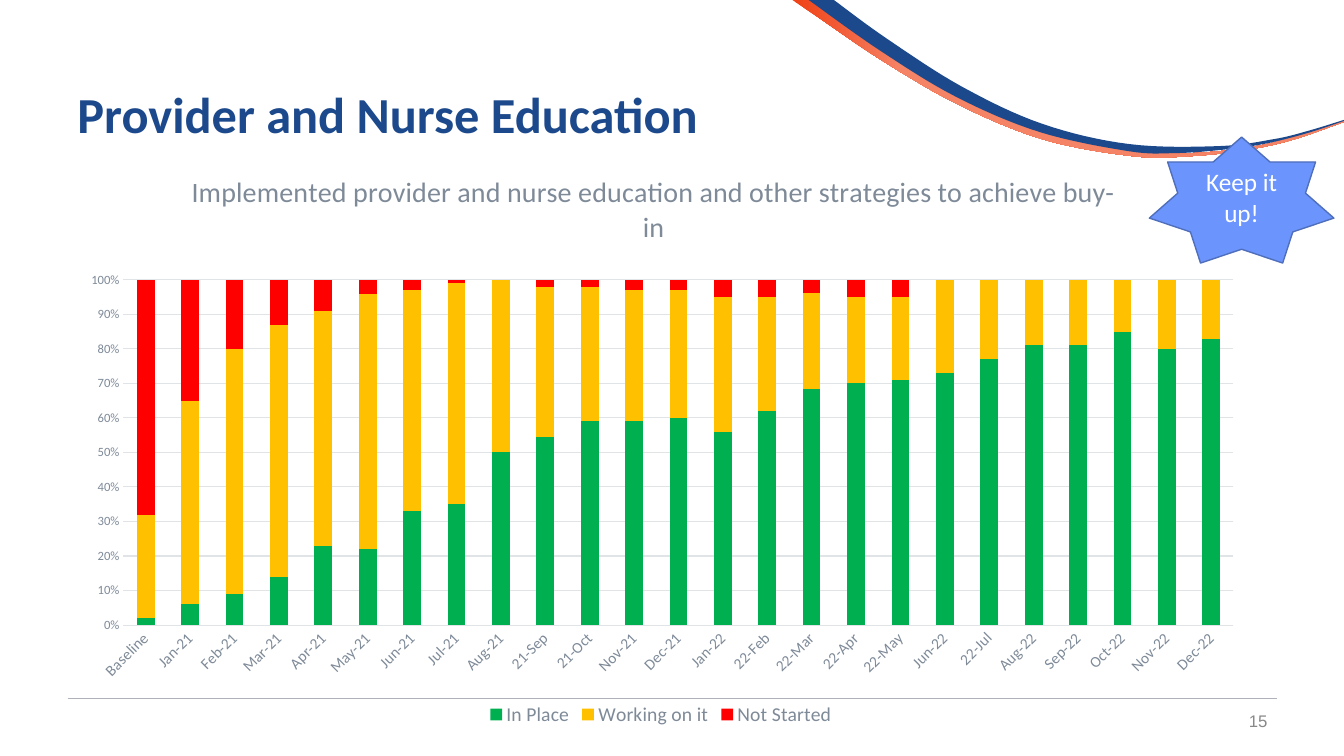
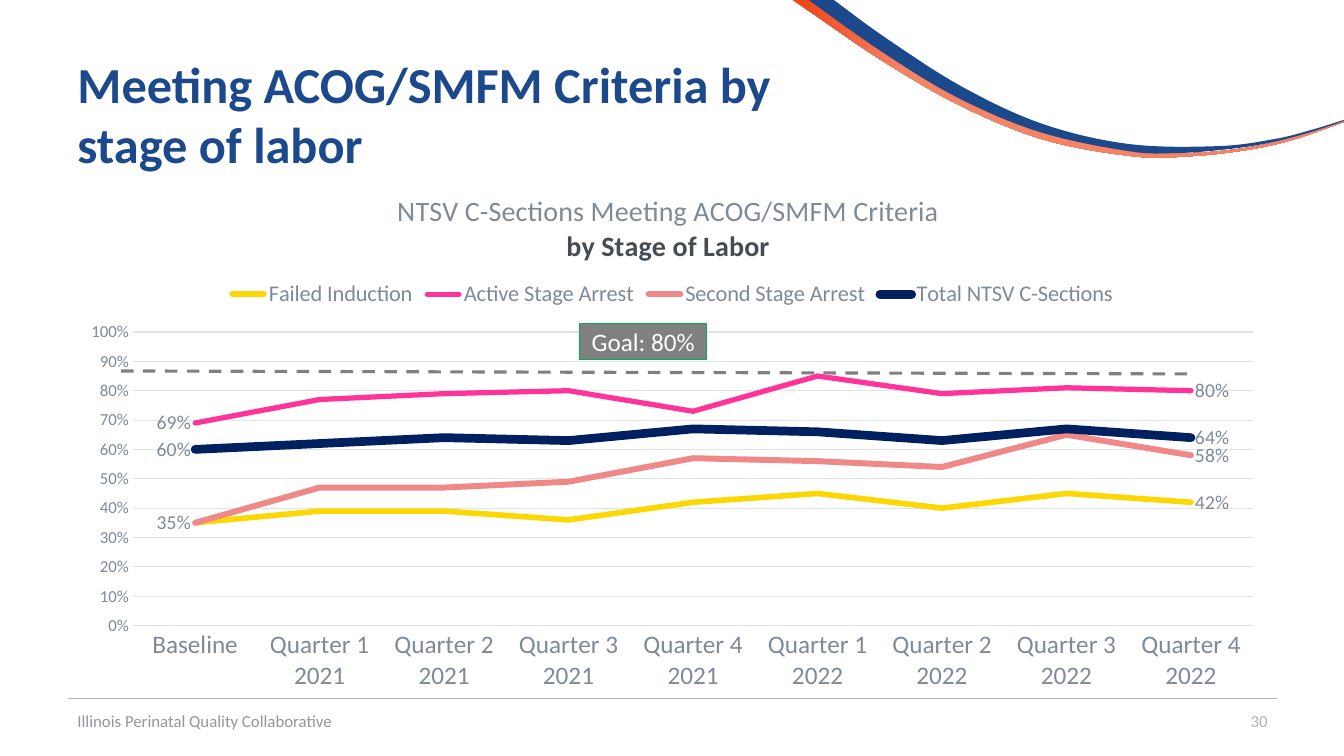
"""Build two slides on perinatal quality measures, each with a native chart."""

from dataclasses import dataclass

import lxml.etree
import pptx
import pptx.chart.chart
import pptx.chart.data
import pptx.dml.color
import pptx.enum.chart
import pptx.enum.dml
import pptx.enum.shapes
import pptx.enum.text
import pptx.oxml
import pptx.oxml.ns
import pptx.slide
import pptx.text.text
import pptx.util

Inches = pptx.util.Inches
Pt = pptx.util.Pt
RGBColor = pptx.dml.color.RGBColor
qn = pptx.oxml.ns.qn
ChartType = pptx.enum.chart.XL_CHART_TYPE
LabelPosition = pptx.enum.chart.XL_LABEL_POSITION
LegendPosition = pptx.enum.chart.XL_LEGEND_POSITION
Align = pptx.enum.text.PP_ALIGN
Preset = pptx.enum.shapes.MSO_SHAPE

NAVY = RGBColor(0x1C, 0x49, 0x8B)
ORANGE = RGBColor(0xF0, 0x41, 0x15)
SALMON = RGBColor(0xF5, 0x83, 0x66)
WHITE = RGBColor(0xFF, 0xFF, 0xFF)
RULE_GREY = RGBColor(0xAF, 0xB3, 0xB9)
NUMBER_GREY = RGBColor(0x89, 0x89, 0x89)
FOOTER_GREY = RGBColor(0x94, 0x96, 0x99)
LABEL_GREY = RGBColor(0x7E, 0x8A, 0x98)
GRID_GREY = RGBColor(0xE1, 0xE4, 0xE7)
SLATE = RGBColor(0x44, 0x4C, 0x55)
GOAL_GREY = RGBColor(0x80, 0x80, 0x80)
GREEN = RGBColor(0x00, 0xB0, 0x50)
AMBER = RGBColor(0xFF, 0xC0, 0x00)
RED = RGBColor(0xFF, 0x00, 0x00)
YELLOW = RGBColor(0xFD, 0xD7, 0x02)
PINK = RGBColor(0xFF, 0x33, 0x99)
ROSE = RGBColor(0xF0, 0x88, 0x88)
MIDNIGHT = RGBColor(0x00, 0x20, 0x60)
STAR_BLUE = RGBColor(0x6B, 0x95, 0xFD)
STAR_EDGE = RGBColor(0x4F, 0x6E, 0xBB)

Points = list[tuple[float, float]]
Box = tuple[float, float, float, float]

ORANGE_TOP: Points = [
    (8.05, 0), (8.82, 0.54), (9.58, 0.99), (10.39, 1.33), (11.25, 1.5),
    (11.79, 1.52), (12.34, 1.47), (12.8, 1.37), (13.33, 1.2)]
ORANGE_BOTTOM: Points = [
    (13.33, 1.21), (12.81, 1.39), (12.35, 1.49), (11.8, 1.55), (11.24, 1.55),
    (10.37, 1.39), (9.55, 1.06), (8.78, 0.62), (8.04, 0.12), (7.86, 0)]
NAVY_TOP: Points = [
    (8.27, 0), (8.79, 0.38), (9.54, 0.86), (10.34, 1.23), (11.2, 1.43),
    (12.09, 1.45), (12.64, 1.38), (12.97, 1.3), (13.33, 1.19)]
NAVY_BOTTOM: Points = [
    (13.33, 1.2), (12.97, 1.32), (12.53, 1.43), (12.09, 1.49), (11.64, 1.52),
    (11.19, 1.5), (10.31, 1.31), (9.48, 0.96), (8.71, 0.49), (8.02, 0)]


@dataclass(frozen=True)
class TextStyle:
    size: float
    color: RGBColor
    bold: bool = False
    font: str = "Calibri"
    align: Align = Align.LEFT


@dataclass(frozen=True)
class Measure:
    name: str
    values: list[float]
    color: RGBColor
    width: float = 0
    labelled: tuple[int, ...] = ()


@dataclass(frozen=True)
class ChartPlan:
    kind: ChartType
    box: Box
    heading: list[tuple[str, TextStyle]]
    categories: list[str]
    measures: list[Measure]
    number_format: str
    category_size: float
    value_size: float
    legend_size: float
    legend_side: LegendPosition
    plot_area: Box
    heading_at: tuple[float, float]
    legend_at: tuple[float, float]


TITLE = TextStyle(36, NAVY, bold=True)
CHART_HEADING = TextStyle(20, LABEL_GREY, align=Align.CENTER)
CHART_SUBHEADING = TextStyle(20, SLATE, bold=True, align=Align.CENTER)
CALLOUT = TextStyle(18, WHITE, align=Align.CENTER)

EDUCATION = ChartPlan(
    ChartType.COLUMN_STACKED_100, (0.67, 1.57, 11.8, 5.69),
    [("Implemented provider and nurse education and other strategies to achieve buy-in",
      CHART_HEADING)],
    ["Baseline", "Jan-21", "Feb-21", "Mar-21", "Apr-21", "May-21", "Jun-21", "Jul-21",
     "Aug-21", "21-Sep", "21-Oct", "Nov-21", "Dec-21", "Jan-22", "22-Feb", "22-Mar",
     "22-Apr", "22-May", "Jun-22", "22-Jul", "Aug-22", "Sep-22", "Oct-22", "Nov-22", "Dec-22"],
    [Measure("In Place", [2, 6, 9, 14, 23, 22, 33, 35, 50, 55, 59, 59, 60, 56, 62, 69, 70, 71,
                          73, 77, 81, 81, 85, 80, 83], GREEN),
     Measure("Working on it", [30, 59, 71, 73, 68, 74, 64, 64, 50, 44, 39, 38, 37, 39, 33, 28,
                               25, 24, 27, 23, 19, 19, 15, 20, 17], AMBER),
     Measure("Not Started", [68, 35, 20, 13, 9, 4, 3, 1, 0, 2, 2, 3, 3, 5, 5, 4, 5, 5,
                             0, 0, 0, 0, 0, 0, 0], RED)],
    "General", 11, 9, 14, LegendPosition.BOTTOM,
    (0.047, 0.212, 0.933, 0.602), (0.1, 0.015), (0.35, 0.95))

LABOR_STAGES = ChartPlan(
    ChartType.LINE, (0.67, 1.72, 12, 5.23),
    [("NTSV C-Sections Meeting ACOG/SMFM Criteria", CHART_HEADING),
     ("by Stage of Labor", CHART_SUBHEADING)],
    ["Baseline"] + [f"Quarter {quarter} {year}" for year in (2021, 2022)
                    for quarter in range(1, 5)],
    [Measure("Failed Induction", [0.35, 0.39, 0.39, 0.36, 0.42, 0.45, 0.4, 0.45, 0.42],
             YELLOW, 4, (8,)),
     Measure("Active Stage Arrest", [0.69, 0.77, 0.79, 0.8, 0.73, 0.85, 0.79, 0.81, 0.8],
             PINK, 3.75, (0, 8)),
     Measure("Second Stage Arrest", [0.35, 0.47, 0.47, 0.49, 0.57, 0.56, 0.54, 0.65, 0.58],
             ROSE, 4.25, (0, 8)),
     Measure("Total NTSV C-Sections", [0.6, 0.62, 0.64, 0.63, 0.67, 0.66, 0.63, 0.67, 0.64],
             MIDNIGHT, 6.25, (0, 8))],
    "0%", 18, 12, 16, LegendPosition.TOP,
    (0.054, 0.301, 0.926, 0.557), (0.27, 0.03), (0.13, 0.195))


def style_font(font: pptx.text.text.Font, style: TextStyle) -> None:
    font.name, font.size, font.bold = style.font, Pt(style.size), style.bold
    font.color.rgb = style.color


def write(paragraph, text: str, style: TextStyle) -> None:
    paragraph.alignment = style.align
    for index, line in enumerate(text.split("\n")):
        if index:
            paragraph.add_line_break()
        run = paragraph.add_run()
        run.text = line
        style_font(run.font, style)


def add_text(slide: pptx.slide.Slide, box: Box, text: str, style: TextStyle) -> None:
    frame = slide.shapes.add_textbox(*map(Inches, box)).text_frame
    frame.word_wrap = True
    frame.vertical_anchor = pptx.enum.text.MSO_ANCHOR.MIDDLE
    write(frame.paragraphs[0], text, style)


def add_callout(slide: pptx.slide.Slide, preset: Preset, box: Box, text: str,
                fill: RGBColor, edge: RGBColor) -> None:
    callout = slide.shapes.add_shape(preset, *map(Inches, box))
    callout.shadow.inherit = False
    callout.fill.solid()
    callout.fill.fore_color.rgb = fill
    callout.line.color.rgb = edge
    callout.line.width = Pt(1)
    callout.text_frame.vertical_anchor = pptx.enum.text.MSO_ANCHOR.MIDDLE
    write(callout.text_frame.paragraphs[0], text, CALLOUT)


def add_line(slide: pptx.slide.Slide, ends: Box, color: RGBColor, width: float,
             dashed: bool = False) -> None:
    connector = slide.shapes.add_connector(
        pptx.enum.shapes.MSO_CONNECTOR.STRAIGHT, *map(Inches, ends))
    connector.line.color.rgb = color
    connector.line.width = Pt(width)
    if dashed:
        connector.line.dash_style = pptx.enum.dml.MSO_LINE.DASH
    lxml.etree.SubElement(connector._element.spPr, qn("a:effectLst"))


def smooth(knots: Points, steps: int = 8) -> Points:
    padded = [knots[0], *knots, knots[-1]]
    curve = [knots[0]]
    for a, b, c, d in zip(padded, padded[1:], padded[2:], padded[3:]):
        for t in (step / steps for step in range(1, steps + 1)):
            x, y = (0.5 * (2 * q + (r - p) * t + (2 * p - 5 * q + 4 * r - s) * t ** 2
                           + (3 * q - p - 3 * r + s) * t ** 3)
                    for p, q, r, s in zip(a, b, c, d))
            curve.append((x, y))
    return curve


def add_ribbon(slide: pptx.slide.Slide, top: Points, bottom: Points,
               colors: list[RGBColor]) -> None:
    outline = [(Inches(x), Inches(y)) for x, y in smooth(top) + smooth(bottom)]
    builder = slide.shapes.build_freeform(*outline[0])
    builder.add_line_segments(outline[1:], close=True)
    ribbon = builder.convert_to_shape()
    ribbon.shadow.inherit = False
    ribbon.line.fill.background()
    if len(colors) == 1:
        ribbon.fill.solid()
        ribbon.fill.fore_color.rgb = colors[0]
        return
    ribbon.fill.gradient()
    ribbon.fill.gradient_angle = 0
    for stop, color, position in zip(ribbon.fill.gradient_stops, colors, (0, 0.2)):
        stop.color.rgb = color
        stop.position = position


def place(part, index: int, fractions: tuple[float, ...], target: str = "") -> None:
    for layout in part.findall(qn("c:layout")):
        part.remove(layout)
    layout = pptx.oxml.parse_xml(f'<c:layout {pptx.oxml.ns.nsdecls("c")}/>')
    manual = lxml.etree.SubElement(layout, qn("c:manualLayout"))
    entries = [("layoutTarget", target)] if target else []
    entries += [("xMode", "edge"), ("yMode", "edge"), *zip("xywh", fractions)]
    for tag, value in entries:
        lxml.etree.SubElement(manual, qn(f"c:{tag}")).set("val", str(value))
    part.insert(index, layout)


def style_axes(chart: pptx.chart.chart.Chart, plan: ChartPlan) -> None:
    months, percents = chart.category_axis, chart.value_axis
    for axis, size in ((months, plan.category_size), (percents, plan.value_size)):
        axis.major_tick_mark = pptx.enum.chart.XL_TICK_MARK.NONE
        style_font(axis.tick_labels.font, TextStyle(size, LABEL_GREY))
    percents.has_major_gridlines = True
    for line in (months.format.line, percents.major_gridlines.format.line):
        line.color.rgb = GRID_GREY
        line.width = Pt(0.75)
    percents.format.line.fill.background()
    percents.minimum_scale, percents.maximum_scale, percents.major_unit = 0, 1, 0.1
    percents.tick_labels.number_format = "0%"
    percents.tick_labels.number_format_is_linked = False


def style_measure(series, measure: Measure) -> None:
    if not measure.width:
        series.format.fill.solid()
        series.format.fill.fore_color.rgb = measure.color
        return
    series.smooth = False
    series.marker.style = pptx.enum.chart.XL_MARKER_STYLE.NONE
    series.format.line.color.rgb = measure.color
    series.format.line.width = Pt(measure.width)
    series._element.find(f'{qn("c:spPr")}/{qn("a:ln")}').set("cap", "rnd")
    for index in measure.labelled:
        label = series.points[index].data_label
        style_font(label.font, TextStyle(14, LABEL_GREY))
        label.position = LabelPosition.RIGHT if index else LabelPosition.LEFT
    series.data_labels.show_value = False


def add_plan(slide: pptx.slide.Slide, plan: ChartPlan) -> pptx.chart.chart.Chart:
    figures = pptx.chart.data.CategoryChartData(number_format=plan.number_format)
    figures.categories = plan.categories
    for measure in plan.measures:
        figures.add_series(measure.name, measure.values)
    chart = slide.shapes.add_chart(plan.kind, *map(Inches, plan.box), figures).chart
    style_font(chart.font, TextStyle(10, SLATE))
    chart.has_title = chart.has_legend = True
    heading = chart.chart_title.text_frame
    for index, (text, style) in enumerate(plan.heading):
        write(heading.add_paragraph() if index else heading.paragraphs[0], text, style)
    chart.legend.position = plan.legend_side
    chart.legend.include_in_layout = False
    style_font(chart.legend.font, TextStyle(plan.legend_size, LABEL_GREY))
    style_axes(chart, plan)
    chart.plots[0].vary_by_categories = False
    for series, measure in zip(chart.plots[0].series, plan.measures):
        style_measure(series, measure)
    place(chart._chartSpace.chart.plotArea, 0, plan.plot_area, "inner")
    place(chart.chart_title._element, 1, plan.heading_at)
    place(chart.legend._element, 1, plan.legend_at)
    return chart


def add_slide(deck, title: str, number: str, number_style: TextStyle) -> pptx.slide.Slide:
    slide = deck.slides.add_slide(deck.slide_layouts[6])
    add_ribbon(slide, ORANGE_TOP, ORANGE_BOTTOM, [ORANGE, SALMON])
    add_ribbon(slide, NAVY_TOP, NAVY_BOTTOM, [NAVY])
    add_line(slide, (0.67, 6.93, 12.67, 6.93), RULE_GREY, 0.5)
    add_text(slide, (0.67, 0.4, 12, 1.45), title, TITLE)
    add_text(slide, (9.67, 6.95, 3, 0.4), number, number_style)
    return slide


def main() -> None:
    deck = pptx.Presentation()
    deck.slide_width, deck.slide_height = Inches(13.33), Inches(7.5)

    education = add_slide(deck, "Provider and Nurse Education", "15",
                          TextStyle(12, NUMBER_GREY, font="Arial", align=Align.RIGHT))
    columns = add_plan(education, EDUCATION)
    columns.plots[0].gap_width, columns.plots[0].overlap = 150, 100
    columns.category_axis._element.txPr.bodyPr.set("rot", "-2700000")
    add_callout(education, Preset.STAR_7_POINT, (11.4, 1.36, 1.83, 1.25), "Keep it up!",
                STAR_BLUE, STAR_EDGE)

    labor = add_slide(deck, "Meeting ACOG/SMFM Criteria by\nstage of labor", "30",
                      TextStyle(12, RULE_GREY, align=Align.RIGHT))
    add_plan(labor, LABOR_STAGES)
    add_text(labor, (0.67, 6.95, 4.5, 0.4), "Illinois Perinatal Quality Collaborative",
             TextStyle(12, FOOTER_GREY))
    add_line(labor, (1.2, 3.68, 11.85, 3.71), GOAL_GREY, 2.25, dashed=True)
    add_callout(labor, Preset.RECTANGLE, (5.75, 3.21, 1.26, 0.36), "Goal: 80%",
                GOAL_GREY, GREEN)
    deck.save("out.pptx")


if __name__ == "__main__":
    main()
